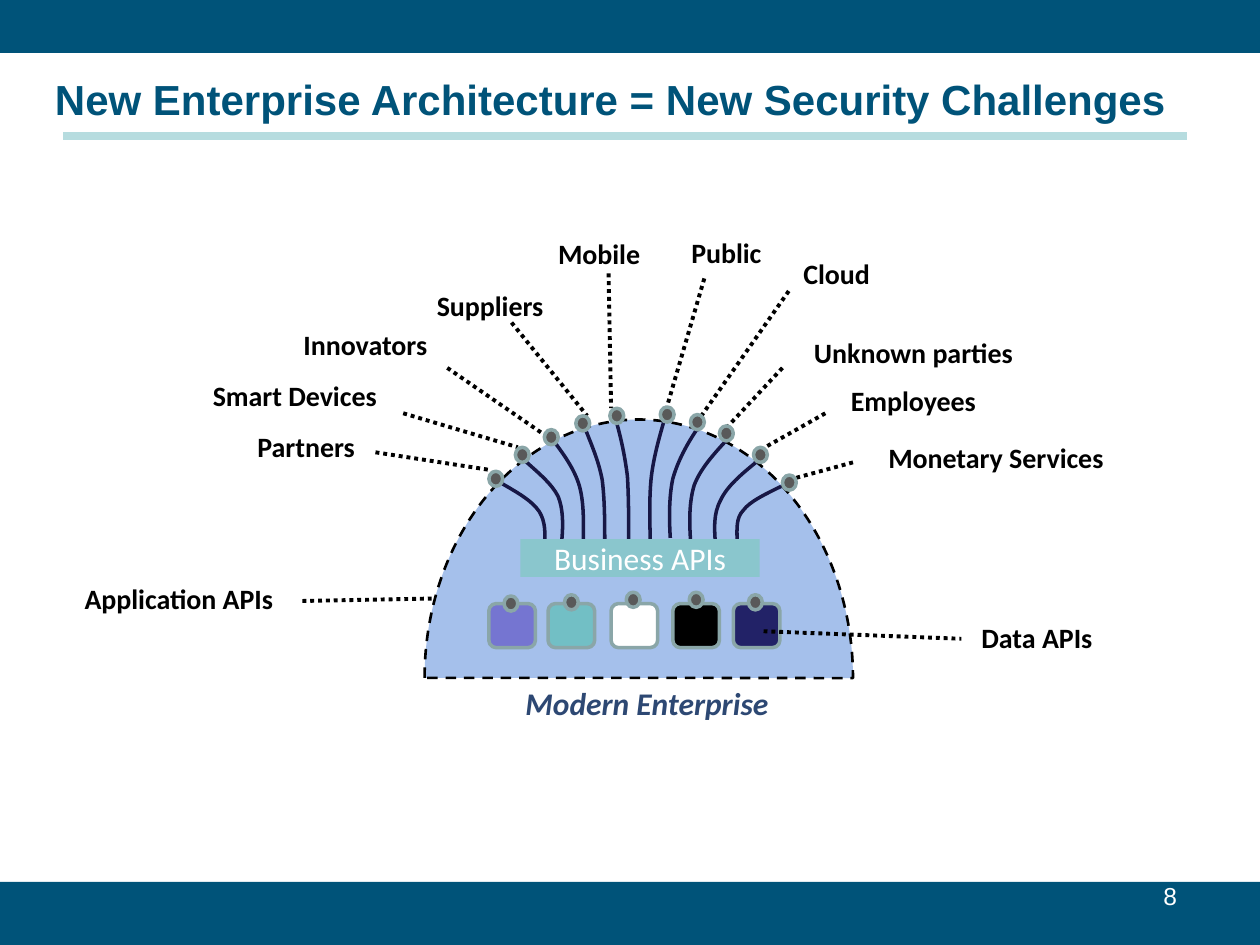
import pptx
import pptx.util
import pptx.dml.color
import pptx.enum.dml
import pptx.enum.shapes
import pptx.enum.text
import pptx.oxml.ns
from lxml import etree

Inches, Pt = pptx.util.Inches, pptx.util.Pt
RGB = pptx.dml.color.RGBColor.from_string
qn = pptx.oxml.ns.qn
SHAPE = pptx.enum.shapes.MSO_SHAPE
DASH = pptx.enum.dml.MSO_LINE
ALIGN = pptx.enum.text.PP_ALIGN
ANCHOR = pptx.enum.text.MSO_ANCHOR

C = {"brand": "005379", "rule": "B6DCDF", "black": "000000", "white": "FFFFFF",
     "dome": "A5C0EB", "curve": "171745", "edge": "8AA6A8", "dot": "595959",
     "band": "8AC6CD", "caption": "2D4873", "violet": "7575D1",
     "teal": "72BFC5", "navy": "222267"}

prs = pptx.Presentation()
prs.slide_width, prs.slide_height = Inches(10), Inches(7.5)
s = prs.slides.add_slide(prs.slide_layouts[5])


def add_shape(kind, x, y, w, h, fill, edge=None, width=2):
    sp = s.shapes.add_shape(kind, Inches(x), Inches(y), Inches(w), Inches(h))
    sp.shadow.inherit = False
    sp.fill.solid()
    sp.fill.fore_color.rgb = RGB(C[fill])
    if edge:
        sp.line.color.rgb = RGB(C[edge])
        sp.line.width = Pt(width)
    else:
        sp.line.fill.background()
    return sp


def add_line(x1, y1, x2, y2, color="black", width=2.25, dash=DASH.ROUND_DOT):
    ln = s.shapes.add_connector(pptx.enum.shapes.MSO_CONNECTOR.STRAIGHT,
                                Inches(x1), Inches(y1), Inches(x2), Inches(y2))
    ln.line.color.rgb = RGB(C[color])
    ln.line.width = Pt(width)
    ln.line.dash_style = dash
    etree.SubElement(ln._element.spPr, qn("a:effectLst"))


# Top and bottom bars, title and rule
add_shape(SHAPE.RECTANGLE, 0, 0, 10, 0.42, "brand")
add_shape(SHAPE.RECTANGLE, 0, 7, 10, 0.5, "brand")
title = s.shapes.title
title.left, title.top = Inches(0.12), Inches(0.47)
title.width, title.height = Inches(9.54), Inches(0.62)
add_line(0.5, 1.08, 9.42, 1.08, "rule", 4.5, DASH.SOLID)

# Dotted leaders from the labels to the dome
for leader in [(2.4, 4.77, 3.99, 4.74), (2.98, 3.59, 3.89, 3.73),
               (3.2, 3.28, 4.11, 3.55), (3.55, 2.92, 4.32, 3.45),
               (4.06, 2.56, 4.66, 3.3), (4.83, 2.17, 4.85, 3.24),
               (5.59, 2.21, 5.29, 3.24), (6.26, 2.31, 5.56, 3.31),
               (6.21, 2.92, 5.78, 3.38), (6.55, 3.28, 6.09, 3.54),
               (6.77, 3.67, 6.29, 3.8)]:
    add_line(*leader)

# Enterprise dome
dome = add_shape(SHAPE.PIE, 3.37, 3.33, 3.4, 4.1, "dome", "black", 1.5)
dome.adjustments[0], dome.adjustments[1] = 108, 0.049
dome.line.dash_style = DASH.DASH

# Curved strands: a start point, then two cubic Béziers of three points each
strands = [
    [(4.32, 4.33), (4.33, 4.24), (4.33, 4.14), (4.28, 4.06), (4.22, 3.97), (4.09, 3.9), (3.97, 3.83)],
    [(4.46, 4.28), (4.47, 4.16), (4.47, 4.04), (4.43, 3.94), (4.38, 3.84), (4.27, 3.75), (4.17, 3.66)],
    [(4.63, 4.33), (4.63, 4.17), (4.64, 4.01), (4.6, 3.86), (4.56, 3.72), (4.47, 3.6), (4.38, 3.48)],
    [(4.8, 4.33), (4.8, 4.15), (4.8, 3.97), (4.78, 3.81), (4.75, 3.65), (4.69, 3.52), (4.64, 3.39)],
    [(4.99, 4.33), (4.99, 4.14), (4.99, 3.95), (4.98, 3.78), (4.96, 3.62), (4.93, 3.48), (4.89, 3.34)],
    [(5.16, 4.33), (5.16, 4.14), (5.15, 3.95), (5.17, 3.78), (5.19, 3.62), (5.23, 3.48), (5.27, 3.34)],
    [(5.32, 4.27), (5.31, 4.11), (5.31, 3.94), (5.34, 3.8), (5.38, 3.66), (5.45, 3.53), (5.53, 3.41)],
    [(5.48, 4.28), (5.47, 4.13), (5.47, 3.98), (5.51, 3.85), (5.56, 3.72), (5.66, 3.61), (5.76, 3.5)],
    [(5.68, 4.33), (5.67, 4.2), (5.66, 4.08), (5.72, 3.97), (5.77, 3.86), (5.89, 3.76), (6, 3.67)],
    [(5.85, 4.28), (5.85, 4.2), (5.84, 4.11), (5.9, 4.05), (5.95, 3.98), (6.08, 3.92), (6.2, 3.86)],
]
for strand in strands:
    start, *rest = [(Inches(x), Inches(y)) for x, y in strand]
    fb = s.shapes.build_freeform(*start)
    fb.add_line_segments(rest, close=False)
    sp = fb.convert_to_shape()
    sp.shadow.inherit = False
    sp.fill.background()
    sp.line.color.rgb = RGB(C["curve"])
    sp.line.width = Pt(2)
    # Turn each three straight segments into one Bézier
    outline = sp._element.xpath(".//a:path")[0]
    segments = outline.findall(qn("a:lnTo"))
    for i in (0, 3):
        bezier = etree.SubElement(outline, qn("a:cubicBezTo"))
        for segment in segments[i:i + 3]:
            bezier.append(segment[0])
            outline.remove(segment)

# Data stores
for x, fill in [(3.88, "violet"), (4.35, "teal"), (4.85, "white"),
                (5.34, "black"), (5.82, "navy")]:
    add_shape(SHAPE.ROUNDED_RECTANGLE, x, 4.79, 0.37, 0.35, fill, "edge")

# API band
band = add_shape(SHAPE.RECTANGLE, 4.13, 4.28, 1.9, 0.3, "band")

# Connection dots on the stores and along the dome
for x, y in [(4, 4.73), (4.48, 4.72), (4.97, 4.7), (5.47, 4.7), (5.94, 4.72),
             (3.88, 3.74), (4.09, 3.55), (4.32, 3.41), (4.57, 3.3), (4.84, 3.24),
             (5.24, 3.23), (5.48, 3.29), (5.71, 3.38), (5.98, 3.55), (6.21, 3.77)]:
    add_shape(SHAPE.OVAL, x, y, 0.11, 0.12, "dot", "edge")

# Leader in front of the last store
add_line(6.06, 5.01, 7.63, 5.07)

# Text boxes
page = s.shapes.add_textbox(Inches(7.11), Inches(6.94), Inches(2.33), Inches(0.52))
caption = s.shapes.add_textbox(Inches(4.06), Inches(5.38), Inches(2.15), Inches(0.4))
texts = [(title, "New Enterprise Architecture = New Security Challenges ", "Arial", 24, "brand", True),
         (page, "8", "Arial", 14, "white", False),
         (band, "Business APIs", "Calibri", 18, "white", False),
         (caption, "Modern Enterprise", "Calibri", 18, "caption", True)]
for text, x, y, w in [("Partners", 1.53, 3.29, 1.8), ("Smart Devices", 1.34, 2.89, 2),
                      ("Innovators", 2.12, 2.48, 1.56), ("Suppliers", 2.99, 2.17, 1.8),
                      ("Mobile", 4.2, 1.76, 1.11), ("Public ", 5.29, 1.75, 1),
                      ("Cloud", 6.05, 1.92, 1.18), ("Unknown parties", 6.17, 2.55, 2.16),
                      ("Employees", 6.35, 2.93, 1.8), ("Monetary Services", 6.77, 3.38, 2.27),
                      ("Application APIs", 0.37, 4.5, 2.1), ("Data APIs", 7.38, 4.81, 1.7)]:
    label = s.shapes.add_textbox(Inches(x), Inches(y), Inches(w), Inches(0.5))
    texts.append((label, text, "Calibri", 16, "black", True))

# Wording and fonts
for sp, text, font, size, color, bold in texts:
    tf = sp.text_frame
    tf.text = text
    tf.word_wrap = True
    tf.vertical_anchor = ANCHOR.MIDDLE
    p = tf.paragraphs[0]
    p.alignment = ALIGN.CENTER
    r = p.runs[0]
    r.font.name, r.font.size, r.font.bold = font, Pt(size), bold
    r.font.color.rgb = RGB(C[color])

page.text_frame.vertical_anchor = ANCHOR.TOP
page.text_frame.paragraphs[0].alignment = ALIGN.RIGHT
caption.text_frame.vertical_anchor = ANCHOR.TOP
caption.text_frame.word_wrap = False
caption.text_frame.auto_size = pptx.enum.text.MSO_AUTO_SIZE.SHAPE_TO_FIT_TEXT
caption.text_frame.paragraphs[0].runs[0].font.italic = True

prs.save("out.pptx")
